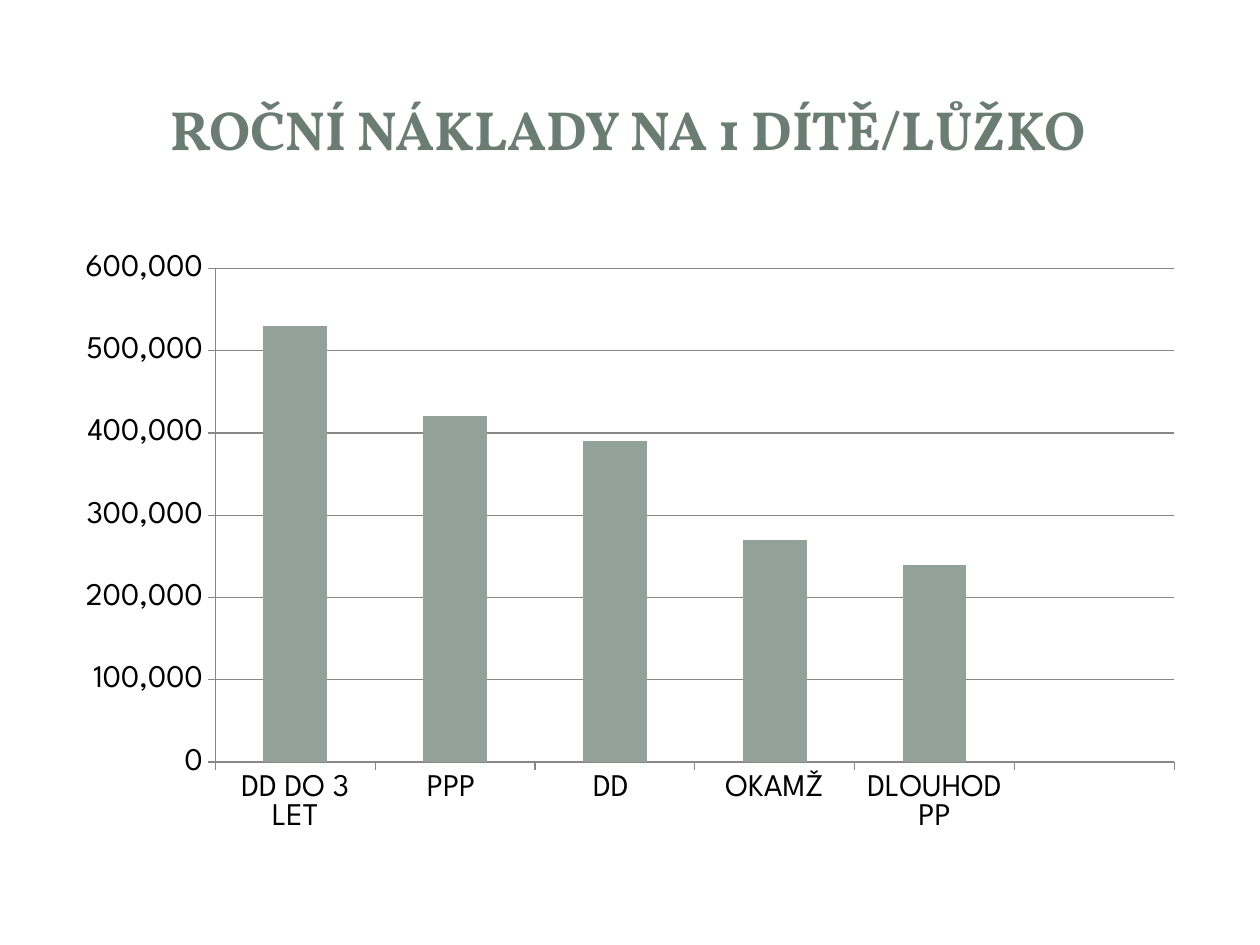
"""Build a slide with a column chart of yearly costs per child or bed."""
from typing import NamedTuple, Optional

from lxml.etree import SubElement
from pptx import Presentation
from pptx.chart.data import CategoryChartData
from pptx.dml.color import RGBColor
from pptx.enum.chart import XL_CHART_TYPE, XL_TICK_MARK
from pptx.enum.shapes import MSO_SHAPE
from pptx.enum.text import MSO_ANCHOR, MSO_AUTO_SIZE, PP_ALIGN
from pptx.oxml.ns import qn
from pptx.util import Pt

COLORS = {
    "title": "6B7D72",
    "column": "93A299",
    "text": "000000",
    "line": "878787",
    "panel": "FFFFFF",
}


class Cost(NamedTuple):
    care: str
    amount: Optional[int]


class Panel(NamedTuple):
    left: float
    top: float
    width: float
    height: float
    opacity: int


COSTS = [
    Cost("DD DO 3 LET", 530000),
    Cost("PPP ", 420000),
    Cost("DD ", 390000),
    Cost("OKAMŽ", 270000),
    Cost("DLOUHOD PP", 240000),
    Cost("", None),
]
TITLE_PANELS = [
    Panel(21.6, 21.6, 676.8, 104.4, 83),
    Panel(29.5, 29.5, 660.25, 87.85, 100),
]


def color(name: str) -> RGBColor:
    return RGBColor.from_string(COLORS[name])


def format_font(font, *, name: str, size: float, shade: str, bold: bool = False) -> None:
    font.name = name
    font.size = Pt(size)
    font.bold = bold
    font.color.rgb = color(shade)


def fill_solid(fill, shade: str) -> None:
    fill.solid()
    fill.fore_color.rgb = color(shade)


def add_panel(page, panel: Panel) -> None:
    box = page.shapes.add_shape(
        MSO_SHAPE.RECTANGLE, Pt(panel.left), Pt(panel.top), Pt(panel.width), Pt(panel.height)
    )
    box.shadow.inherit = False
    box.line.fill.background()
    fill_solid(box.fill, "panel")
    if panel.opacity < 100:
        shade = box.element.spPr.find(qn("a:solidFill"))[0]
        SubElement(shade, qn("a:alpha")).set("val", str(panel.opacity * 1000))


def set_title(box, text: str, **font_format) -> None:
    box.left, box.top, box.width, box.height = Pt(33.85), Pt(32.2), Pt(660.25), Pt(82)
    frame = box.text_frame
    frame.word_wrap = True
    frame.auto_size = MSO_AUTO_SIZE.NONE
    frame.vertical_anchor = MSO_ANCHOR.MIDDLE
    frame.margin_right = Pt(17.2)
    para = frame.paragraphs[0]
    para.alignment = PP_ALIGN.CENTER
    span = para.add_run()
    span.text = text
    format_font(span.font, **font_format)


def style_line(line) -> None:
    line.color.rgb = color("line")
    line.width = Pt(0.75)


def add_cost_chart(page, costs: list[Cost]) -> None:
    data = CategoryChartData(number_format="#,##0")
    data.categories = [cost.care for cost in costs]
    data.add_series("Series 1", [cost.amount for cost in costs])
    chart = page.shapes.add_chart(
        XL_CHART_TYPE.COLUMN_CLUSTERED, Pt(36), Pt(138.25), Pt(648), Pt(344.25), data
    ).chart
    chart.has_legend = False
    chart.has_title = False
    format_font(chart.font, name="League Spartan", size=18, shade="text")
    plot = chart.plots[0]
    plot.gap_width = 150
    plot.vary_by_categories = False
    fill_solid(plot.series[0].format.fill, "column")
    for axis in (chart.category_axis, chart.value_axis):
        axis.major_tick_mark = XL_TICK_MARK.OUTSIDE
        axis.minor_tick_mark = XL_TICK_MARK.NONE
        style_line(axis.format.line)
    scale = chart.value_axis
    scale.minimum_scale, scale.maximum_scale, scale.major_unit = 0, 600000, 100000
    scale.tick_labels.number_format = "#,##0"
    scale.tick_labels.number_format_is_linked = False
    scale.has_major_gridlines = True
    style_line(scale.major_gridlines.format.line)


def main() -> None:
    deck = Presentation()
    deck.slide_width, deck.slide_height = Pt(720), Pt(540)
    page = deck.slides.add_slide(deck.slide_layouts[5])
    title = page.shapes.title
    for panel in TITLE_PANELS:
        add_panel(page, panel)
    page.shapes.element.append(title.element)
    set_title(
        title,
        "ROČNÍ NÁKLADY NA 1 DÍTĚ/LŮŽKO",
        name="Vollkorn",
        size=31.5,
        shade="title",
        bold=True,
    )
    add_cost_chart(page, COSTS)
    deck.save("out.pptx")


if __name__ == "__main__":
    main()
